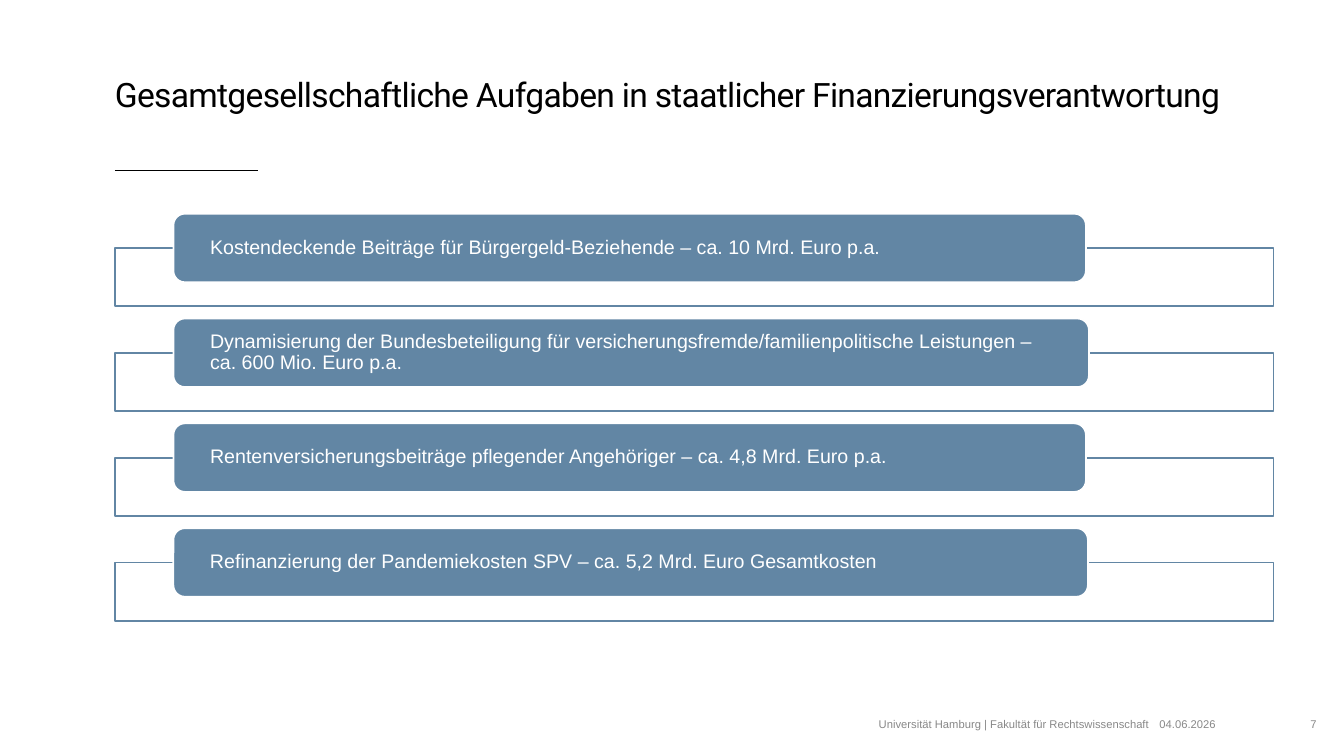
from lxml import etree
from pptx import Presentation
from pptx.dml.color import RGBColor
from pptx.enum import shapes, text
from pptx.oxml.ns import qn
from pptx.util import Inches, Pt

BLUE, WHITE, BLACK, GREY = "6286A4", "FFFFFF", "000000", "888888"
LEFT = 1.14
# Wording and bar width of each task
TASKS = [
    ("Kostendeckende Beiträge für Bürgergeld-Beziehende – ca. 10 Mrd. Euro p.a.", 9.05),
    ("Dynamisierung der Bundesbeteiligung für versicherungsfremde/familienpolitische "
     "Leistungen – ca. 600 Mio. Euro p.a.", 9.08),
    ("Rentenversicherungsbeiträge pflegender Angehöriger – ca. 4,8 Mrd. Euro p.a.", 9.05),
    ("Refinanzierung der Pandemiekosten SPV – ca. 5,2 Mrd. Euro Gesamtkosten", 9.07),
]


def rgb(color):
    return RGBColor.from_string(color)


def write(sp, words, size, color, font="Arial", anchor=text.MSO_ANCHOR.BOTTOM,
          align=text.PP_ALIGN.LEFT, inset=0, spacing=1.0):
    tf = sp.text_frame
    tf.word_wrap = True
    tf.vertical_anchor = anchor
    tf.margin_left = tf.margin_right = Inches(inset)
    tf.margin_top = tf.margin_bottom = 0
    p = tf.paragraphs[0]
    p.alignment = align
    p.line_spacing = spacing
    r = p.add_run()
    r.text = words
    r.font.size = Pt(size)
    r.font.name = font
    r.font.color.rgb = rgb(color)
    return r


def add_box(s, kind, x, y, w, h, fill, line):
    sp = s.shapes.add_shape(kind, Inches(x), Inches(y), Inches(w), Inches(h))
    sp.shadow.inherit = False
    sp.fill.solid()
    sp.fill.fore_color.rgb = rgb(fill)
    sp.line.color.rgb = rgb(line)
    sp.line.width = Pt(1.25)
    return sp


def add_header(s, x, y, w, h):
    # Title with slightly tightened letters
    title = s.shapes.add_textbox(Inches(x), Inches(y), Inches(w), Inches(h))
    r = write(title, "Gesamtgesellschaftliche Aufgaben in staatlicher Finanzierungsverantwortung",
              24, BLACK, font="Roboto", spacing=1.1)
    r.font._element.set("spc", "-50")

    # Short rule below the title
    rule_y = Inches(y + h + 0.56)
    rule = s.shapes.add_connector(shapes.MSO_CONNECTOR.STRAIGHT,
                                  Inches(x), rule_y, Inches(x + 1.42), rule_y)
    rule.line.color.rgb = rgb(BLACK)
    rule.line.width = Pt(0.5)
    etree.SubElement(rule._element.spPr, qn("a:effectLst"))


def add_task(s, x, y, w, words, bar_w):
    # Open frame behind the bar
    frame = add_box(s, shapes.MSO_SHAPE.RECTANGLE, x, y + 0.34, w, 0.58, WHITE, BLUE)
    fill_color = frame._element.spPr.find(qn("a:solidFill"))[0]
    etree.SubElement(fill_color, qn("a:alpha"), val="90000")

    # Rounded bar with the wording
    bar = add_box(s, shapes.MSO_SHAPE.ROUNDED_RECTANGLE, x + 0.58, y, bar_w, 0.68, BLUE, WHITE)
    write(bar, words, 14, WHITE, anchor=text.MSO_ANCHOR.MIDDLE, inset=0.33, spacing=0.9)


def add_tasks(s, x, y, w, pitch):
    for i, (words, bar_w) in enumerate(TASKS):
        add_task(s, x, y + i * pitch, w, words, bar_w)


def add_footer(s, y, h):
    right, left = text.PP_ALIGN.RIGHT, text.PP_ALIGN.LEFT
    for words, x, w, align in [
        ("Universität Hamburg | Fakultät für Rechtswissenschaft", 2.01, 9.39, right),
        ("04.06.2026", 11.5, 1.03, left),
        ("7", 12.63, 0.43, right),
    ]:
        sp = s.shapes.add_textbox(Inches(x), Inches(y), Inches(w), Inches(h))
        write(sp, words, 8, GREY, align=align)


def main():
    prs = Presentation()
    prs.slide_width, prs.slide_height = Inches(13.33), Inches(7.5)
    s = prs.slides.add_slide(prs.slide_layouts[6])
    add_header(s, LEFT, 0.28, 11.92, 0.85)
    add_tasks(s, LEFT, 2.12, 11.49, 1.04)
    add_footer(s, 6.97, 0.28)
    prs.save("out.pptx")


if __name__ == "__main__":
    main()
